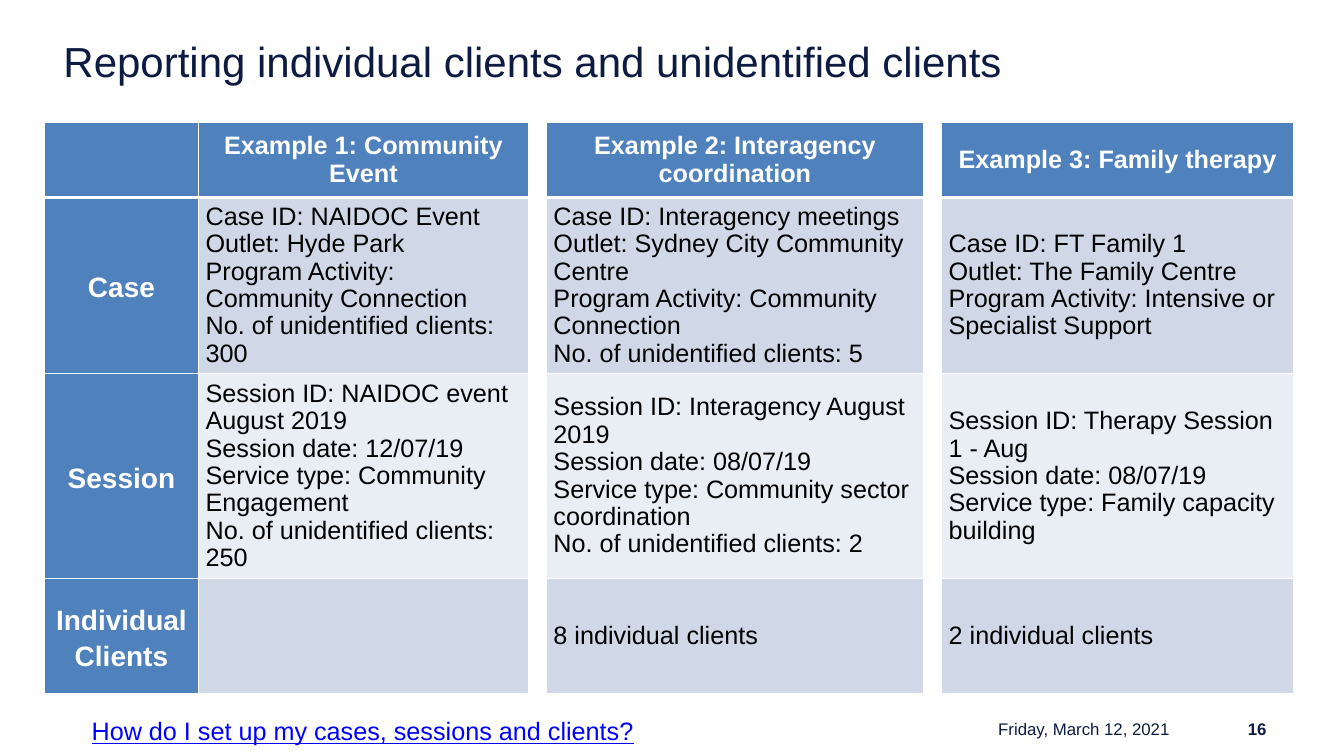
import pptx
import pptx.util
import pptx.dml.color
import pptx.enum.text
import pptx.oxml
import pptx.oxml.ns

Inch, Pt = pptx.util.Inches, pptx.util.Pt
Align, Anchor = pptx.enum.text.PP_ALIGN, pptx.enum.text.MSO_ANCHOR
HUES = {"navy": "0D1B43", "head": "4F81BD", "odd": "D0D8E8", "even": "E9EDF4",
        "white": "FFFFFF", "black": "000000", "link": "0000FF"}

deck = pptx.Presentation()
deck.slide_width, deck.slide_height = Inch(13.33), Inch(7.5)
slide = deck.slides.add_slide(deck.slide_layouts[6])


def style(para, size, hue, bold=False, line=False, align=Align.LEFT):
    para.alignment = align
    for run in para.runs:
        font = run.font
        font.name, font.size, font.bold = "Arial", Pt(size), bold
        if line:
            font.underline = True
        font.color.rgb = pptx.dml.color.RGBColor.from_string(HUES[hue])


def edge(cell, side, width):
    space = pptx.oxml.ns.nsdecls("a")
    props = cell._tc.get_or_add_tcPr()
    props.append(pptx.oxml.parse_xml(
        f'<a:{side} {space} w="{Pt(width)}"><a:solidFill>'
        f'<a:srgbClr val="{HUES["white"]}"/></a:solidFill></a:{side}>'))


# Title, page number, date and question
labels = [
    ("Reporting individual clients and unidentified clients",
     (0.63, 0.35, 12, 0.66), 30, "navy", False, False, Align.LEFT, Anchor.TOP),
    ("16", (11.57, 7.12, 1.09, 0.23), 12, "navy", True, False, Align.RIGHT, Anchor.MIDDLE),
    ("Friday, March 12, 2021",
     (8.59, 7.12, 3.11, 0.23), 12, "navy", False, False, Align.RIGHT, Anchor.MIDDLE),
    ("How do I set up my cases, sessions and clients?",
     (0.81, 7.05, 5.69, 0.4), 18, "link", False, True, Align.LEFT, Anchor.TOP),
]
for text, place, size, hue, bold, line, align, anchor in labels:
    frame = slide.shapes.add_textbox(*map(Inch, place)).text_frame
    frame.word_wrap, frame.vertical_anchor = True, anchor
    if size == 30:
        frame.margin_left = frame.margin_right = 0
        frame.margin_top = frame.margin_bottom = 0
    frame.text = text
    style(frame.paragraphs[0], size, hue, bold, line, align)

# Table words, with empty columns as gaps
rows = [
    ["", "Example 1: Community Event", "",
     "Example 2: Interagency coordination", "", "Example 3: Family therapy"],
    ["Case",
     "Case ID: NAIDOC Event\nOutlet: Hyde Park\n"
     "Program Activity: Community Connection\nNo. of unidentified clients: 300", "",
     "Case ID: Interagency meetings\nOutlet: Sydney City Community Centre\n"
     "Program Activity: Community Connection\nNo. of unidentified clients: 5", "",
     "Case ID: FT Family 1\nOutlet: The Family Centre\n"
     "Program Activity: Intensive or Specialist Support"],
    ["Session",
     "Session ID: NAIDOC event August 2019\nSession date: 12/07/19\n"
     "Service type: Community Engagement\nNo. of unidentified clients: 250", "",
     "Session ID: Interagency August 2019\nSession date: 08/07/19\n"
     "Service type: Community sector coordination\nNo. of unidentified clients: 2", "",
     "Session ID: Therapy Session 1 - Aug\nSession date: 08/07/19\n"
     "Service type: Family capacity building"],
    ["Individual Clients", "", "", "8 individual clients", "", "2 individual clients"],
]
widths = [1.53, 3.27, 0.18, 3.74, 0.18, 3.49]
heights = [0.75, 1.14, 1.51, 1.14]
table = slide.shapes.add_table(
    len(rows), len(widths), Inch(0.44), Inch(1.21),
    Inch(sum(widths)), Inch(sum(heights))).table
for col, width in zip(table.columns, widths):
    col.width = Inch(width)
for row, height in zip(table.rows, heights):
    row.height = Inch(height)

# Cells: blue heads, banded body, white gaps
for r, words in enumerate(rows):
    for c, text in enumerate(words):
        cell = table.cell(r, c)
        gap, head = c in (2, 4), r == 0 or c == 0
        cell.margin_left = cell.margin_right = Inch(0.07)
        cell.margin_top = cell.margin_bottom = 0
        cell.vertical_anchor = Anchor.MIDDLE
        cell.text_frame.text = text
        for para in cell.text_frame.paragraphs:
            if head:
                style(para, 20 if c == 0 else 18, "white", True, align=Align.CENTER)
            else:
                style(para, 18, "black")
            if r > 0:
                para.line_spacing = 1.15 if c == 0 else 0.97
        # Borders come before the fill in the cell's properties
        edge(cell, "lnL", 1)
        edge(cell, "lnR", 1)
        if r > 0:
            edge(cell, "lnT", 3 if r == 1 else 1)
        edge(cell, "lnB", 3 if r == 0 else 1)
        hue = "white" if gap else "head" if head else "odd" if r % 2 else "even"
        cell.fill.solid()
        cell.fill.fore_color.rgb = pptx.dml.color.RGBColor.from_string(HUES[hue])

deck.save("out.pptx")
